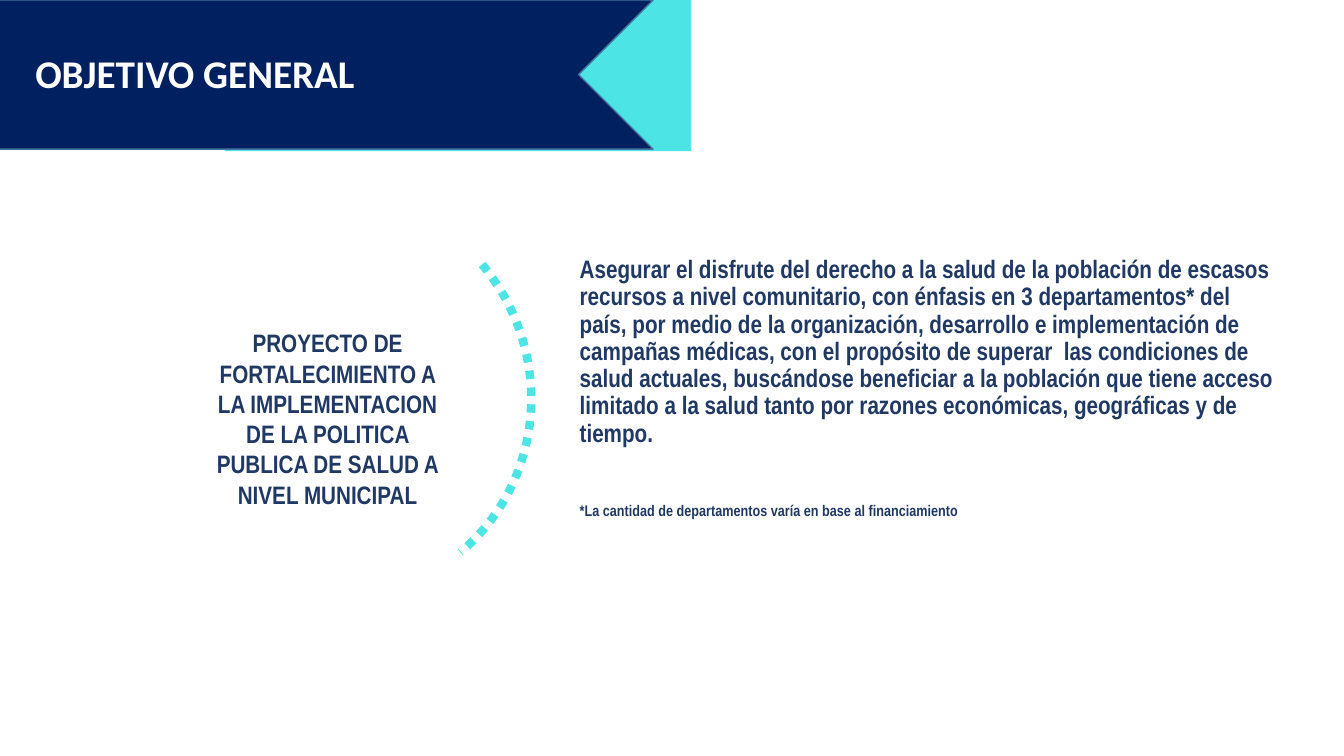
"""Build the general objective slide of a municipal health project."""
import dataclasses

import lxml.etree
import pptx
import pptx.dml.color
import pptx.enum.dml
import pptx.enum.shapes
import pptx.enum.text
import pptx.oxml.ns
import pptx.shapes.autoshape
import pptx.slide
import pptx.text.text
import pptx.util

Pt = pptx.util.Pt
Align = pptx.enum.text.PP_ALIGN
Anchor = pptx.enum.text.MSO_ANCHOR
Preset = pptx.enum.shapes.MSO_SHAPE


@dataclasses.dataclass(frozen=True)
class Theme:
    navy: str = "002060"
    turquoise: str = "4CE4E4"
    outline: str = "43739E"
    ink: str = "203864"
    white: str = "FFFFFF"
    title_font: str = "Calibri"
    text_font: str = "Arial Narrow"
    title_size: float = 28
    text_size: float = 18
    note_size: float = 11


THEME = Theme()


@dataclasses.dataclass(frozen=True)
class Box:
    left: float
    top: float
    width: float
    height: float

    def lengths(self) -> tuple[pptx.util.Length, ...]:
        return Pt(self.left), Pt(self.top), Pt(self.width), Pt(self.height)


@dataclasses.dataclass(frozen=True)
class Figure:
    preset: Preset
    box: Box
    rotation: float
    fill: str | None = None
    line: str | None = None
    line_width: float = 1
    dash: pptx.enum.dml.MSO_LINE | None = None


FIGURES = (
    Figure(Preset.RECTANGLE, Box(160.5, -12, 333, 120), 180, fill=THEME.turquoise),
    Figure(Preset.CHEVRON, Box(-96.5, 0, 563, 106.5), 180,
           fill=THEME.navy, line=THEME.outline),
    Figure(Preset.ARC, Box(86.5, 137.5, 295, 288), 50, line=THEME.turquoise,
           line_width=6, dash=pptx.enum.dml.MSO_LINE.ROUND_DOT),
)

TITLE = "OBJETIVO GENERAL"
PROJECT = ("PROYECTO DE FORTALECIMIENTO A LA IMPLEMENTACION DE LA POLITICA "
           "PUBLICA DE SALUD A NIVEL MUNICIPAL")
OBJECTIVE = (
    "Asegurar el disfrute del derecho a la salud de la población de escasos recursos "
    "a nivel comunitario, con énfasis en 3 departamentos* del país, por medio de la "
    "organización, desarrollo e implementación de campañas médicas, con el propósito de "
    "superar  las condiciones de salud actuales, buscándose beneficiar a la población que "
    "tiene acceso limitado a la salud tanto por razones económicas, geográficas y de tiempo."
)
NOTE = "*La cantidad de departamentos varía en base al financiamiento"


def color(value: str) -> pptx.dml.color.RGBColor:
    return pptx.dml.color.RGBColor.from_string(value)


def draw_figure(slide: pptx.slide.Slide, figure: Figure) -> None:
    shape = slide.shapes.add_shape(figure.preset, *figure.box.lengths())
    shape.rotation = figure.rotation
    shape.shadow.inherit = False
    if figure.fill:
        shape.fill.solid()
        shape.fill.fore_color.rgb = color(figure.fill)
    else:
        shape.fill.background()
    if figure.line:
        shape.line.color.rgb = color(figure.line)
        shape.line.width = Pt(figure.line_width)
        if figure.dash:
            shape.line.dash_style = figure.dash
    else:
        shape.line.fill.background()


def prepare_frame(frame: pptx.text.text.TextFrame, anchor: Anchor = Anchor.TOP) -> None:
    frame.word_wrap = True
    frame.auto_size = pptx.enum.text.MSO_AUTO_SIZE.NONE
    frame.vertical_anchor = anchor


def write_text(paragraph: pptx.text.text._Paragraph, text: str, *,
               size: float = THEME.text_size, font: str = THEME.text_font,
               ink: str = THEME.ink, align: Align = Align.LEFT,
               line_spacing: float = 0.9, space_before: float = 0) -> None:
    paragraph.alignment = align
    paragraph.line_spacing = line_spacing
    paragraph.space_before = Pt(space_before)
    run = paragraph.add_run()
    run.text = text
    run.font.name = font
    run.font.size = Pt(size)
    run.font.bold = True
    run.font.color.rgb = color(ink)


def add_frame(slide: pptx.slide.Slide, box: Box) -> pptx.text.text.TextFrame:
    frame = slide.shapes.add_textbox(*box.lengths()).text_frame
    prepare_frame(frame)
    return frame


def place_title(slide: pptx.slide.Slide) -> None:
    title = slide.shapes.title
    title.left, title.top, title.width, title.height = Box(18, 2, 828, 104.5).lengths()
    prepare_frame(title.text_frame, Anchor.MIDDLE)
    write_text(title.text_frame.paragraphs[0], TITLE, size=THEME.title_size,
               font=THEME.title_font, ink=THEME.white)
    slide.shapes.element.append(title.element)


def main() -> None:
    presentation = pptx.Presentation()
    presentation.slide_width, presentation.slide_height = Pt(960), Pt(540)
    slide = presentation.slides.add_slide(presentation.slide_layouts.get_by_name("Title Only"))
    for figure in FIGURES:
        draw_figure(slide, figure)
    place_title(slide)

    project = add_frame(slide, Box(141, 230.5, 186, 160))
    write_text(project.paragraphs[0], PROJECT, align=Align.CENTER, line_spacing=1)

    objective = add_frame(slide, Box(407, 180, 512.5, 245.5))
    write_text(objective.paragraphs[0], OBJECTIVE, space_before=10)
    write_text(objective.add_paragraph(), NOTE, size=THEME.note_size, space_before=39.5)

    presentation.save("out.pptx")


if __name__ == "__main__":
    main()
